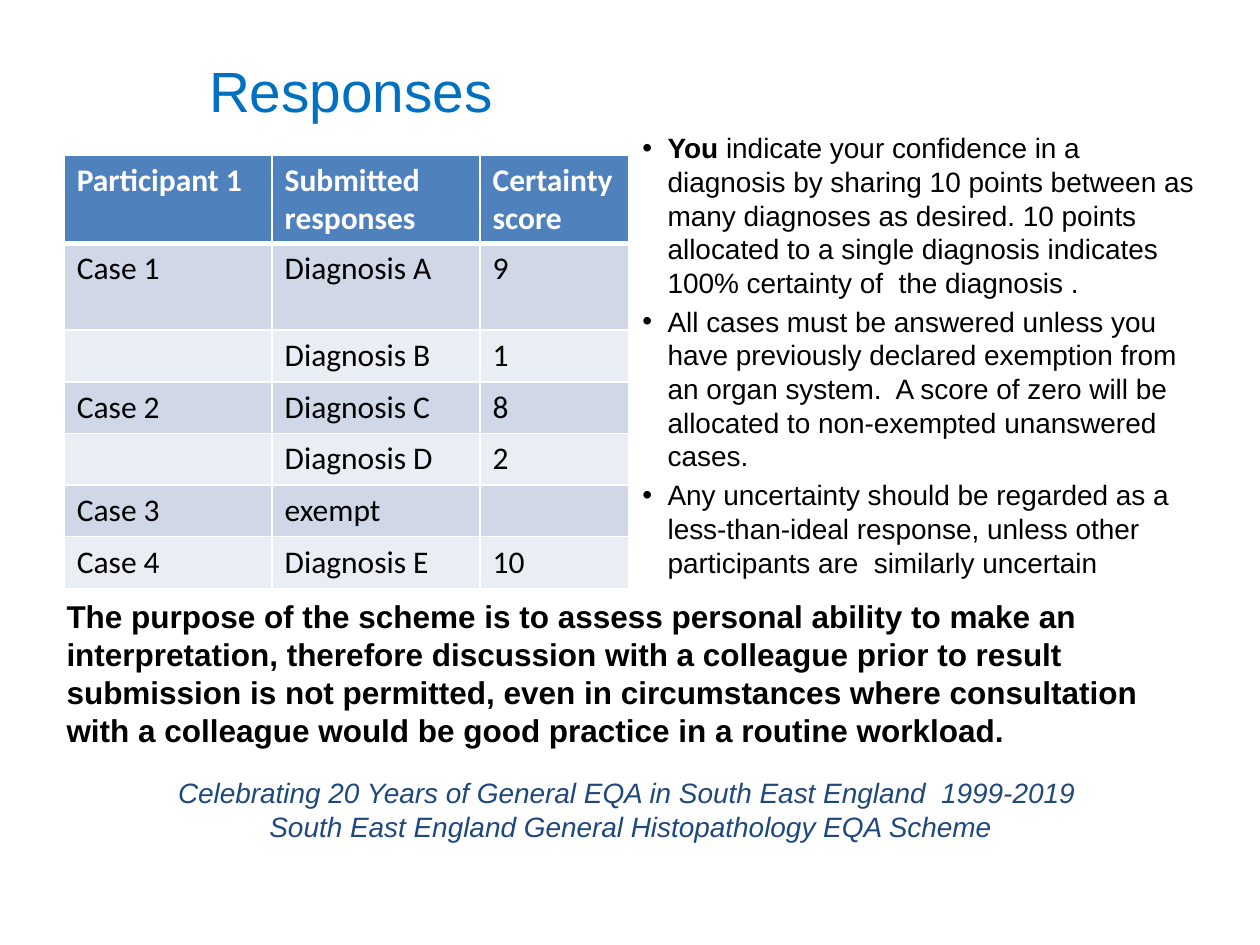
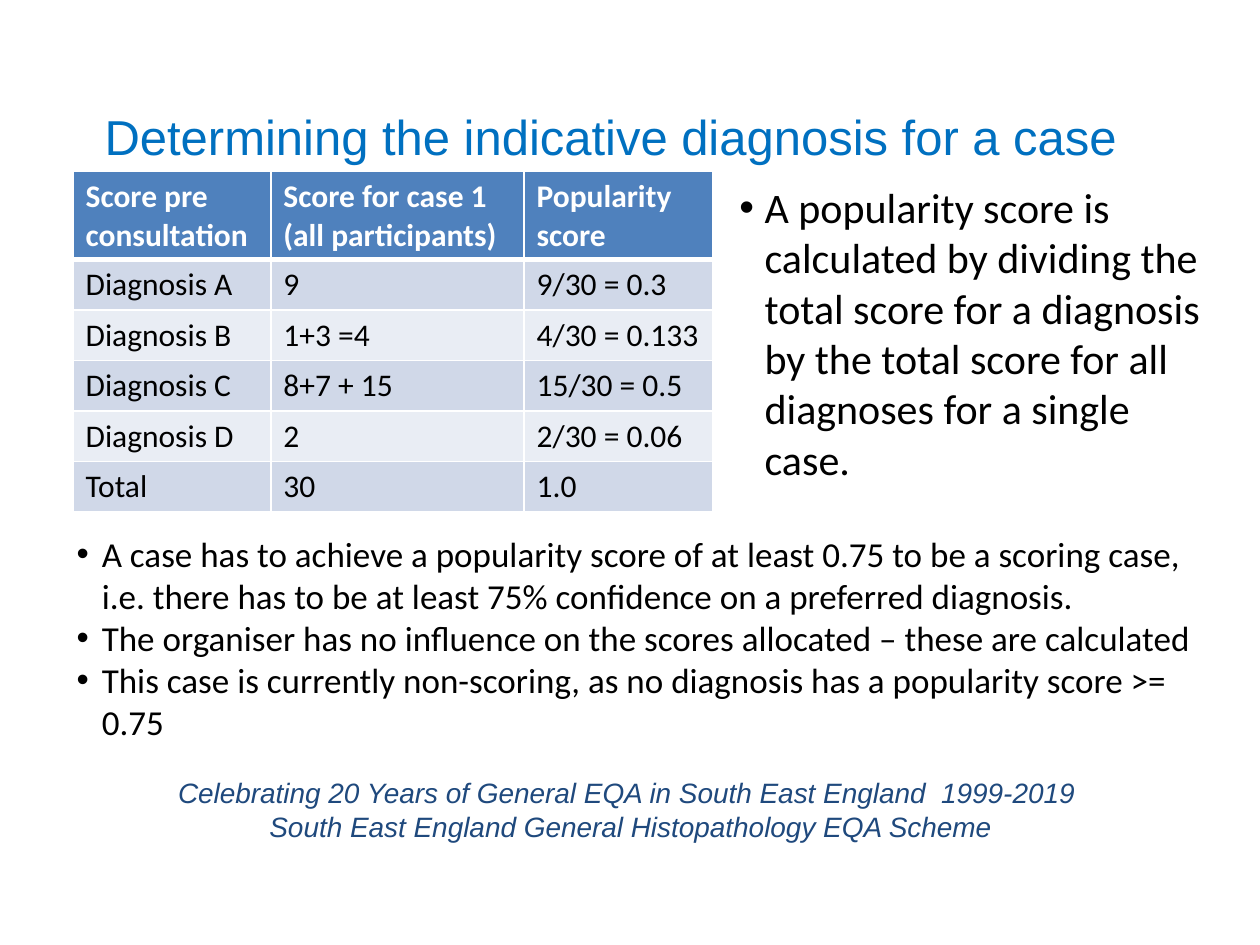
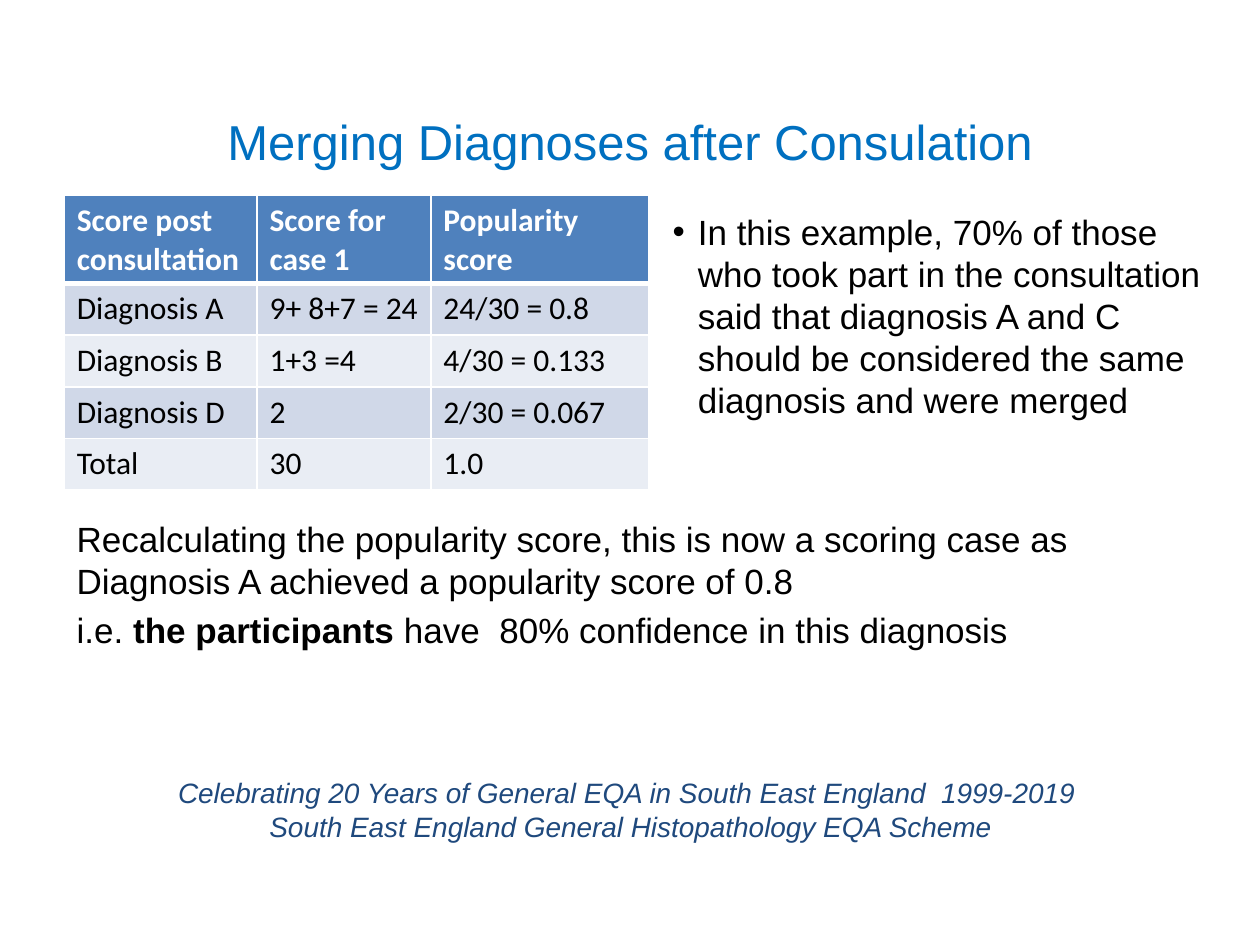
from lxml.etree import SubElement
from pptx import Presentation
from pptx.dml.color import RGBColor
from pptx.enum.text import MSO_ANCHOR, PP_ALIGN
from pptx.oxml.ns import qn
from pptx.util import Inches, Pt

BLUE = "0070C0"
NAVY = "1F497D"
BLACK = "000000"
WHITE = "FFFFFF"
HEAD = "4F81BD"
BANDS = ("D0D8E8", "E9EDF4")
FOOTER = (
    "Celebrating 20 Years of General EQA in South East England  1999-2019 ",
    "South East England General Histopathology EQA Scheme",
)


def color(code):
    return RGBColor.from_string(code)


class Deck:
    def __init__(self):
        self.file = Presentation()
        self.file.slide_width = Inches(10)
        self.file.slide_height = Inches(7.5)
        self.slide = None

    def page(self, title, spot, size=28):
        self.slide = self.file.slides.add_slide(self.file.slide_layouts[6])
        self.text(spot, [title], size, tint=BLUE, center=True, middle=True)
        self.text((0.2, 6.11, 9.61, 0.64), FOOTER, 16, tint=NAVY,
                  italic=True, center=True)

    def run(self, para, words, size, face, tint, bold=False, italic=False):
        run = para.add_run()
        run.text = words
        font = run.font
        font.size = Pt(size)
        font.name = face
        font.bold = bold
        font.italic = italic
        font.color.rgb = color(tint)

    def bullet(self, para):
        props = para._p.get_or_add_pPr()
        props.set("marL", str(Inches(0.2)))
        props.set("indent", str(Inches(-0.2)))
        SubElement(props, qn("a:buFont"), typeface="Arial")
        SubElement(props, qn("a:buChar"), char="•")

    def text(self, spot, lines, size, face="Arial", tint=BLACK, bold=False,
             italic=False, center=False, middle=False, bullets=False, gap=0):
        box = self.slide.shapes.add_textbox(*map(Inches, spot))
        frame = box.text_frame
        frame.word_wrap = True
        if middle:
            frame.vertical_anchor = MSO_ANCHOR.MIDDLE
        for i, line in enumerate(lines):
            para = frame.add_paragraph() if i else frame.paragraphs[0]
            if bullets:
                self.bullet(para)
            if center:
                para.alignment = PP_ALIGN.CENTER
            if i and gap:
                para.space_before = Pt(gap)
            for j, part in enumerate(line.split("*")):
                if part:
                    self.run(para, part, size, face, tint,
                             bold or j % 2 == 1, italic)

    def edge(self, cell, side, width):
        props = cell._tc.get_or_add_tcPr()
        line = SubElement(props, qn("a:ln" + side), w=str(Pt(width)))
        fill = SubElement(line, qn("a:solidFill"))
        SubElement(fill, qn("a:srgbClr"), val=WHITE)

    def table(self, left, top, widths, rows, heights):
        shape = self.slide.shapes.add_table(
            len(rows), len(widths), Inches(left), Inches(top),
            Inches(sum(widths)), Inches(sum(heights)))
        grid = shape.table
        for col, width in zip(grid.columns, widths):
            col.width = Inches(width)
        for r, row in enumerate(rows):
            grid.rows[r].height = Inches(heights[r])
            for c, words in enumerate(row):
                cell = grid.cell(r, c)
                for side in "LRTB":
                    thick = (r, side) in ((0, "B"), (1, "T"))
                    self.edge(cell, side, 3 if thick else 1)
                cell.fill.solid()
                cell.fill.fore_color.rgb = color(BANDS[(r - 1) % 2] if r else HEAD)
                para = cell.text_frame.paragraphs[0]
                if words:
                    self.run(para, words, 18, "Calibri",
                             BLACK if r else WHITE, bold=r == 0)


def answers(deck):
    deck.page("Responses", (0.67, 0.44, 4.23, 0.55), 32.4)
    deck.table(0.51, 1.23, (1.65, 1.65, 1.18), [
        ("Participant 1", "Submitted responses", "Certainty score"),
        ("Case 1", "Diagnosis A", "9"),
        ("", "Diagnosis B", "1"),
        ("Case 2", "Diagnosis C", "8"),
        ("", "Diagnosis D", "2"),
        ("Case 3", "exempt", ""),
        ("Case 4", "Diagnosis E", "10"),
    ], [0.7, 0.69] + [0.41] * 5)
    deck.text((5, 0.99, 4.65, 3.7), [
        "*You* indicate your confidence in a diagnosis by sharing 10 points "
        "between as many diagnoses as desired. 10 points allocated to a single "
        "diagnosis indicates 100% certainty of  the diagnosis .",
        "All cases must be answered unless you have previously declared "
        "exemption from an organ system.  A score of zero will be allocated to "
        "non-exempted unanswered cases.",
        "Any uncertainty should be regarded as a less-than-ideal response, "
        "unless other participants are  similarly uncertain",
    ], 16, bullets=True, gap=3.2)
    deck.text((0.43, 4.69, 9.13, 1.34), [
        "The purpose of the scheme is to assess personal ability to make an "
        "interpretation, therefore discussion with a colleague prior to result "
        "submission is not permitted, even in circumstances where consultation "
        "with a colleague would be good practice in a routine workload.",
    ], 18, bold=True)


def scores(deck):
    deck.page("Determining the indicative diagnosis for a case",
              (0.2, 0.68, 9.29, 0.79))
    deck.table(0.58, 1.36, (1.57, 2.01, 1.5), [
        ("Score pre consultation", "Score for case 1 (all participants)",
         "Popularity score"),
        ("Diagnosis A", "9", "9/30 = 0.3"),
        ("Diagnosis B", "1+3 =4", "4/30 = 0.133"),
        ("Diagnosis C", "8+7 + 15", "15/30 = 0.5"),
        ("Diagnosis D", "2", "2/30 = 0.06"),
        ("Total", "30", "1.0"),
    ], [0.7] + [0.4] * 5)
    deck.text((5.77, 1.39, 3.88, 2.52), [
        "A popularity score is calculated by dividing the total score for a "
        "diagnosis by the total score for all diagnoses for a single case.",
    ], 24, "Calibri", bullets=True)
    deck.text((0.51, 4.18, 9.13, 1.78), [
        "A case has to achieve a popularity score of at least 0.75 to be a "
        "scoring case, i.e. there has to be at least 75% confidence on a "
        "preferred diagnosis.",
        "The organiser has no influence on the scores allocated – these are "
        "calculated",
        "This case is currently non-scoring, as no diagnosis has a popularity "
        "score >= 0.75",
    ], 20, "Calibri", bullets=True)


def merger(deck):
    deck.page("Merging Diagnoses after Consulation", (0.62, 0.84, 8.76, 0.55))
    deck.table(0.51, 1.55, (1.53, 1.38, 1.73), [
        ("Score post consultation", "Score for case 1", "Popularity score"),
        ("Diagnosis A", "9+ 8+7 = 24", "24/30 = 0.8"),
        ("Diagnosis B", "1+3 =4", "4/30 = 0.133"),
        ("Diagnosis D", "2", "2/30 = 0.067"),
        ("Total", "30", "1.0"),
    ], [0.7] + [0.41] * 4)
    deck.text((5.24, 1.62, 4.49, 2.05), [
        "In this example, 70% of those who took part in the consultation said "
        "that diagnosis A and C should be considered the same diagnosis and "
        "were merged",
    ], 20, bullets=True)
    deck.text((0.51, 4.06, 8.9, 1.42), [
        "Recalculating the popularity score, this is now a scoring case as "
        "Diagnosis A achieved a popularity score of 0.8",
        "i.e. *the participants *have  80% confidence in this diagnosis",
    ], 20, gap=4)


def main():
    deck = Deck()
    answers(deck)
    scores(deck)
    merger(deck)
    deck.file.save("out.pptx")


if __name__ == "__main__":
    main()
